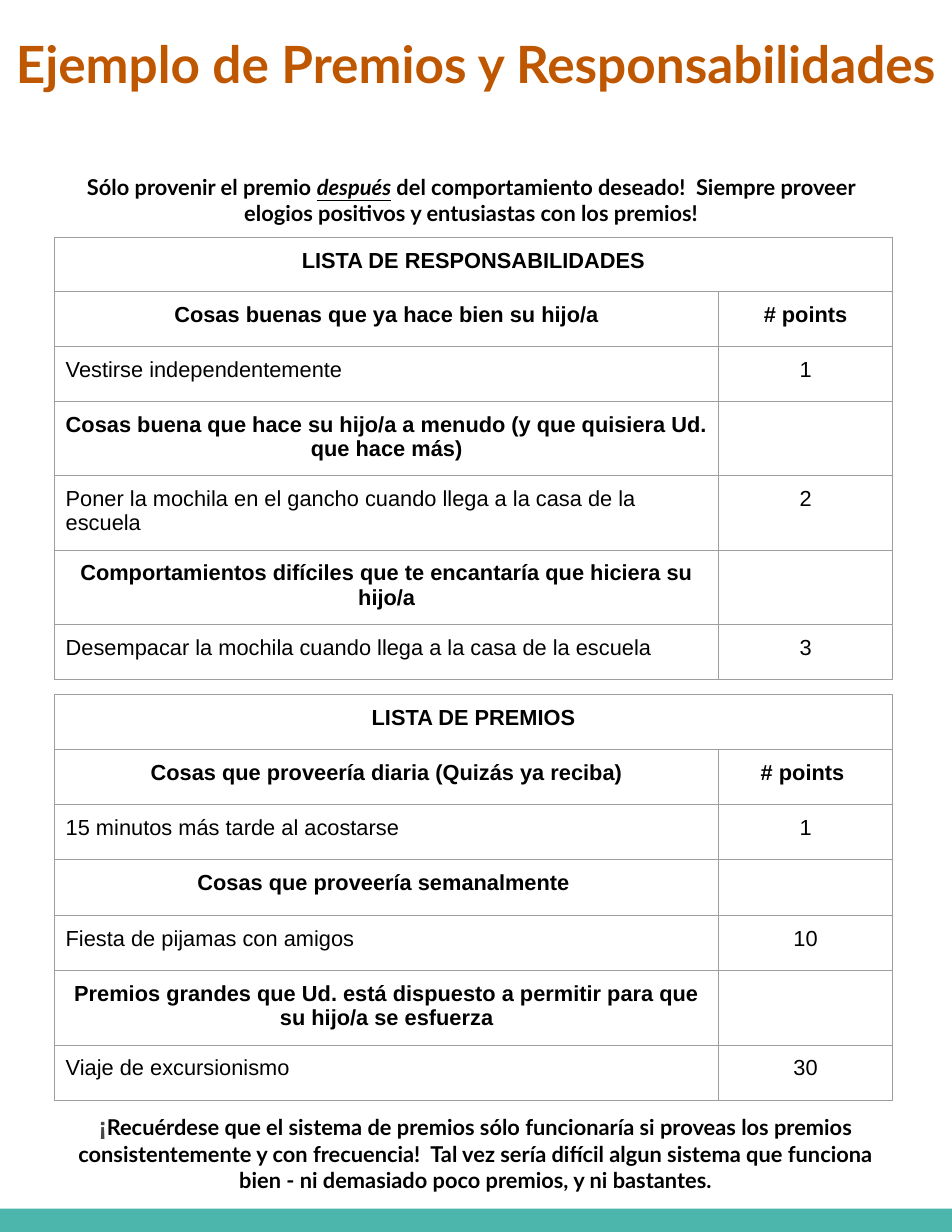
from lxml.etree import SubElement
from pptx import Presentation
from pptx.dml.color import RGBColor
from pptx.enum.shapes import MSO_SHAPE as Shape
from pptx.enum.text import MSO_ANCHOR as Anchor, PP_ALIGN as Align
from pptx.oxml.ns import qn
from pptx.util import Cm, Pt

ORANGE = RGBColor(0xBF, 0x57, 0x00)
TEAL = RGBColor(0x4D, 0xB6, 0xAC)
BLACK = RGBColor(0x00, 0x00, 0x00)
DARK_GREY = RGBColor(0x47, 0x47, 0x47)
BORDER_GREY = RGBColor(0x9E, 0x9E, 0x9E)

PAGE_WIDTH, PAGE_HEIGHT = 21.59, 27.94
INSET = Cm(0.25)
TABLE_LEFT = 1.24
COLUMN_WIDTHS = (15.06, 3.94)


class Handout:
    heading_font = "Lato"
    table_font = "Arial"
    body_size = 14

    def __init__(self, slide):
        self.slide = slide

    def style(self, run, font, size, color=BLACK, bold=True):
        run.font.name = font
        run.font.size = Pt(size)
        run.font.color.rgb = color
        run.font.bold = bold

    def band(self, left, top, width, height, color):
        band = self.slide.shapes.add_shape(
            Shape.RECTANGLE, Cm(left), Cm(top), Cm(width), Cm(height))
        band.shadow.inherit = False
        band.fill.solid()
        band.fill.fore_color.rgb = color
        band.line.fill.background()

    def text(self, left, top, width, height, parts, size=body_size, color=BLACK):
        """Add a centred text box and return its runs, one per part."""
        frame = self.slide.shapes.add_textbox(
            Cm(left), Cm(top), Cm(width), Cm(height)).text_frame
        frame.word_wrap = True
        frame.margin_left = frame.margin_right = INSET
        frame.margin_top = frame.margin_bottom = INSET
        paragraph = frame.paragraphs[0]
        paragraph.alignment = Align.CENTER
        for part in parts:
            run = paragraph.add_run()
            run.text = part
            self.style(run, self.heading_font, size, color)
        return paragraph.runs

    def borders(self, cell):
        properties = cell._tc.get_or_add_tcPr()
        for position, side in enumerate(("lnL", "lnR", "lnT", "lnB")):
            line = SubElement(properties, qn(f"a:{side}"), w=str(Pt(0.75)))
            fill = SubElement(line, qn("a:solidFill"))
            SubElement(fill, qn("a:srgbClr"), val=str(BORDER_GREY))
            properties.insert(position, line)

    def cell(self, cell, content, bold, align):
        cell.fill.background()
        self.borders(cell)
        cell.vertical_anchor = Anchor.TOP
        cell.margin_left = cell.margin_right = INSET
        cell.margin_top = cell.margin_bottom = INSET
        if content:
            cell.text_frame.text = content
            paragraph = cell.text_frame.paragraphs[0]
            paragraph.alignment = align
            self.style(paragraph.runs[0], self.table_font, self.body_size, bold=bold)

    def points_table(self, top, row_height, title, points_label, groups):
        """Each group is a bold heading followed by an example and its points."""
        rows = [(title, "", True)]
        for index, (heading, example, points) in enumerate(groups):
            rows.append((heading, "" if index else points_label, True))
            rows.append((example, points, False))
        table = self.slide.shapes.add_table(
            len(rows), 2, Cm(TABLE_LEFT), Cm(top), Cm(sum(COLUMN_WIDTHS)),
            Cm(row_height * len(rows))).table
        table.first_row = table.horz_banding = False
        for column, width in zip(table.columns, COLUMN_WIDTHS):
            column.width = Cm(width)
        for index, (label, points, bold) in enumerate(rows):
            table.rows[index].height = Cm(row_height)
            self.cell(table.cell(index, 0), label, bold,
                      Align.CENTER if bold else Align.LEFT)
            self.cell(table.cell(index, 1), points, bold, Align.CENTER)
        table.cell(0, 0).merge(table.cell(0, 1))


def main():
    deck = Presentation()
    deck.slide_width, deck.slide_height = Cm(PAGE_WIDTH), Cm(PAGE_HEIGHT)
    handout = Handout(deck.slides.add_slide(deck.slide_layouts[6]))

    # Footer band and title
    handout.band(0, 27.41, PAGE_WIDTH, 0.53, TEAL)
    handout.text(0, 0.48, PAGE_WIDTH, 2.24,
                 ["Ejemplo de Premios y Responsabilidades"], 33, ORANGE)

    # Closing reminder
    reminder = handout.text(1.19, 24.94, 19.2, 2.82, [
        "¡",
        "Recuérdese que el sistema de premios sólo funcionaría si proveas los "
        "premios consistentemente y con frecuencia!  Tal vez sería difícil algun "
        "sistema que funciona bien - ni demasiado poco premios, y ni bastantes."])
    handout.style(reminder[0], handout.table_font, 16, DARK_GREY)

    # Responsibilities and rewards
    handout.points_table(5.38, 1.24, "LISTA DE RESPONSABILIDADES", "# points", [
        ("Cosas buenas que ya hace bien su hijo/a",
         "Vestirse independentemente", "1"),
        ("Cosas buena que hace su hijo/a a menudo (y que quisiera Ud. que hace más)",
         "Poner la mochila en el gancho cuando llega a la casa de la escuela", "2"),
        ("Comportamientos difíciles que te encantaría que hiciera su hijo/a",
         "Desempacar la mochila cuando llega a la casa de la escuela", "3")])
    handout.points_table(15.75, 1.25, "LISTA DE PREMIOS", "# points ", [
        ("Cosas que proveería diaria (Quizás ya reciba)",
         "15 minutos más tarde al acostarse", "1"),
        ("Cosas que proveería semanalmente ",
         "Fiesta de pijamas con amigos", "10"),
        ("Premios grandes que Ud. está dispuesto a permitir para que su hijo/a "
         "se esfuerza",
         "Viaje de excursionismo", "30")])

    # Opening advice
    advice = handout.text(1.37, 3.68, 18.64, 1.78, [
        "Sólo provenir el premio ", "después",
        " del comportamiento deseado!  Siempre proveer elogios positivos y "
        "entusiastas con los premios!"])
    advice[1].font.italic = advice[1].font.underline = True

    deck.save("out.pptx")


if __name__ == "__main__":
    main()
